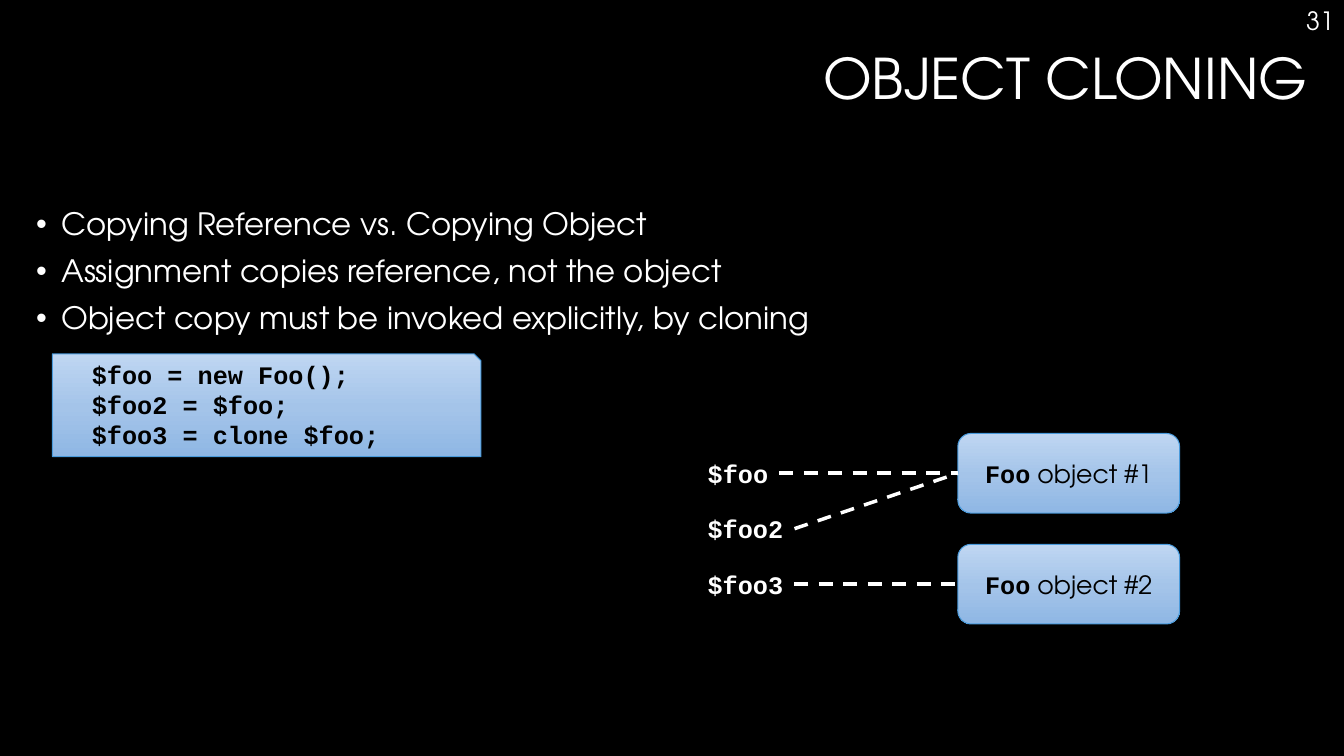
from copy import deepcopy

from lxml import etree
from pptx import Presentation
from pptx.dml.color import RGBColor
from pptx.enum.dml import MSO_LINE
from pptx.enum.shapes import MSO_CONNECTOR, MSO_SHAPE
from pptx.enum.text import MSO_ANCHOR, PP_ALIGN
from pptx.oxml.ns import qn
from pptx.util import Inches, Pt

LEFT, CENTER, RIGHT = PP_ALIGN.LEFT, PP_ALIGN.CENTER, PP_ALIGN.RIGHT
MIDDLE = MSO_ANCHOR.MIDDLE
DASH = MSO_LINE.DASH
STRAIGHT = MSO_CONNECTOR.STRAIGHT
SNIPPED, ROUNDED = MSO_SHAPE.SNIP_1_RECTANGLE, MSO_SHAPE.ROUNDED_RECTANGLE

COLORS = {"background": "000000", "light": "FFFFFF", "dark": "000000", "edge": "4A9BDC"}
PANEL_STOPS = [(0, "BFD6F2"), (0.52, "A4C4E9"), (1, "8FB7E4")]
SANS, MONO = "TeX Gyre Adventor", "Courier New"

MARGIN, CONTENT_WIDTH, CONTENT_HEIGHT = 0.26, 12.81, 1.41
ROW_TOP, ROW_PITCH = 4.3, 1.1
OBJECT_LEFT, OBJECT_WIDTH, OBJECT_HEIGHT = 9.5, 2.2, 0.79
VARIABLE_LEFT, VARIABLE_HEIGHT = 6.92, 0.4

prs = Presentation()
prs.slide_width, prs.slide_height = Inches(13.33), Inches(7.5)
slide = prs.slides.add_slide(prs.slide_layouts[6])
slide.background.fill.solid()
slide.background.fill.fore_color.rgb = RGBColor.from_string(COLORS["background"])


def write(holder, lines, size, color, align=LEFT, **paragraph_format):
    """Fill a shape with lines, each a list of (text, font name, bold) runs."""
    frame = holder.text_frame
    for index, runs in enumerate(lines):
        paragraph = frame.add_paragraph() if index else frame.paragraphs[0]
        paragraph.alignment = align
        for attribute, value in paragraph_format.items():
            setattr(paragraph, attribute, value)
        for text, font_name, bold in runs:
            run = paragraph.add_run()
            run.text = text
            run.font.name, run.font.size, run.font.bold = font_name, Pt(size), bold
            run.font.color.rgb = RGBColor.from_string(COLORS[color])
    return frame


def add_panel(preset, *box):
    """Add a blue gradient panel; box is left, top, width, height in inches."""
    panel = slide.shapes.add_shape(preset, *map(Inches, box))
    panel.shadow.inherit = False
    panel.fill.gradient()
    panel.fill.gradient_angle = 270
    first_stop = panel._element.xpath(".//a:gs")[0]
    first_stop.addnext(deepcopy(first_stop))
    for stop, (position, color) in zip(panel.fill.gradient_stops, PANEL_STOPS):
        stop.position = position
        stop.color.rgb = RGBColor.from_string(color)
    panel.line.color.rgb = RGBColor.from_string(COLORS["edge"])
    panel.line.width = Pt(0.75)
    panel.text_frame.vertical_anchor = MIDDLE
    return panel


# Bullets, title and slide number
points = [
    "Copying Reference vs. Copying Object",
    "Assignment copies reference, not the object",
    "Object copy must be invoked explicitly, by cloning",
]
headings = [
    ((MARGIN, 2.02, CONTENT_WIDTH, CONTENT_HEIGHT), points, 22, LEFT,
     {"line_spacing": 0.9, "space_before": Pt(10)}),
    ((MARGIN, 0.46, CONTENT_WIDTH, CONTENT_HEIGHT), ["OBJECT CLONING"], 40, RIGHT,
     {"line_spacing": 0.9}),
    ((10.45, 0, 2.88, 0.4), ["31"], 18, RIGHT, {}),
]
for box, lines, size, align, paragraph_format in headings:
    heading = slide.shapes.add_textbox(*map(Inches, box))
    frame = write(heading, [[(line, SANS, False)] for line in lines], size, "light",
                  align, **paragraph_format)
    frame.word_wrap = True
    if lines is points:
        for paragraph in frame.paragraphs:
            properties = paragraph._p.get_or_add_pPr()
            properties.set("marL", str(Inches(0.25)))
            properties.set("indent", str(-Inches(0.25)))
            bullet_color = etree.SubElement(properties, qn("a:buClr"))
            etree.SubElement(bullet_color, qn("a:srgbClr"), val=COLORS["light"])
            etree.SubElement(properties, qn("a:buFont"), typeface="Arial")
            etree.SubElement(properties, qn("a:buChar"), char="•")

# Code sample
code = ["$foo = new Foo();", "$foo2 = $foo;", "$foo3 = clone $foo;"]
code_panel = add_panel(SNIPPED, 0.52, 3.51, 4.25, 1.02)
code_panel.adjustments[0] = 0.068
frame = write(code_panel, [[(line, MONO, True)] for line in code], 18, "dark")
insets = {"margin_left": 0.39, "margin_top": 0, "margin_right": 0.1, "margin_bottom": 0.05}
for side, inset in insets.items():
    setattr(frame, side, Inches(inset))

# Objects in memory
for row in range(2):
    instance = add_panel(ROUNDED, OBJECT_LEFT, ROW_TOP + row * ROW_PITCH,
                         OBJECT_WIDTH, OBJECT_HEIGHT)
    write(instance, [[("Foo", MONO, True), (f" object #{row + 1}", SANS, False)]],
          18, "dark", CENTER)

# Variables, half a row apart, each linked to the object it refers to
first_center = ROW_TOP + OBJECT_HEIGHT / 2
references = [("$foo", 0.81, 0), ("$foo2", 0.96, 0), ("$foo3", 0.96, 1)]
for index, (variable, width, target_row) in enumerate(references):
    center = first_center + index * ROW_PITCH / 2
    label = slide.shapes.add_textbox(
        *map(Inches, (VARIABLE_LEFT, center - VARIABLE_HEIGHT / 2, width, VARIABLE_HEIGHT)))
    write(label, [[(variable, MONO, True)]], 18, "light").word_wrap = False

    target_center = first_center + target_row * ROW_PITCH
    link = slide.shapes.add_connector(
        STRAIGHT, *map(Inches, (VARIABLE_LEFT + width, center, OBJECT_LEFT, target_center)))
    link.line.color.rgb = RGBColor.from_string(COLORS["light"])
    link.line.width = Pt(2.5)
    link.line.dash_style = DASH
    etree.SubElement(link._element.spPr, qn("a:effectLst"))

prs.save("out.pptx")
